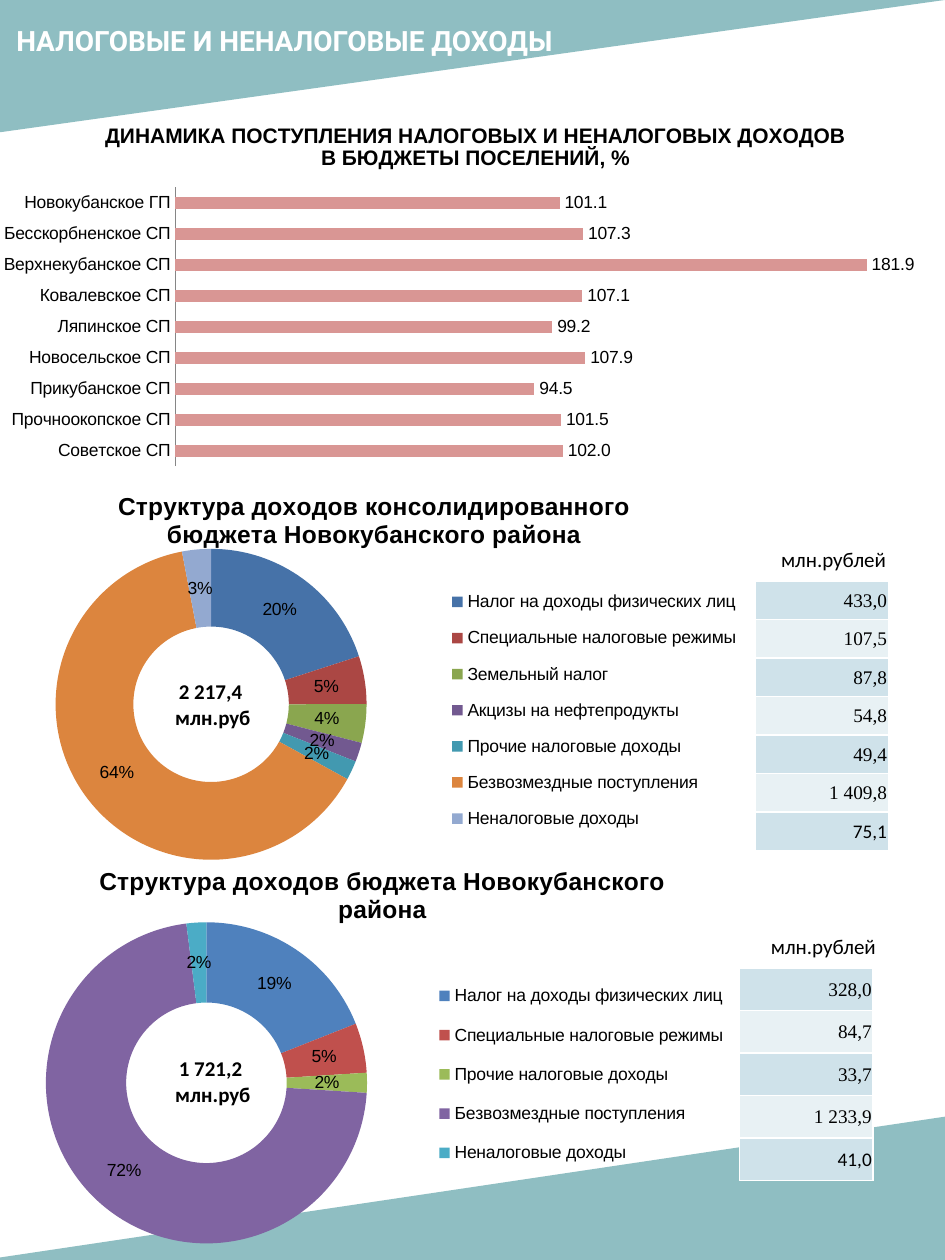
from dataclasses import dataclass

from lxml import etree
from pptx import Presentation
from pptx import util as u
from pptx.chart import data as chart_data
from pptx.dml.color import RGBColor
from pptx.enum import chart as charts, shapes, text
from pptx.oxml import ns, parse_xml

Pt = u.Pt
BLACK, WHITE, TEAL, ROSE, GREY = "000000", "FFFFFF", "519AA0", "D99694", "868686"
BANDS = ("CFE2EA", "E8F1F4")


@dataclass
class Box:
    left: float
    top: float
    width: float
    height: float

    def lengths(self) -> tuple:
        return Pt(self.left), Pt(self.top), Pt(self.width), Pt(self.height)


@dataclass
class Structure:
    """One budget: its ring chart, total and table of amounts."""
    title: str
    chart: Box
    plot: Box
    legend: Box
    total: Box
    total_value: str
    unit: Box
    table: Box
    items: list  # (name, percent, amount, colour)


STRUCTURES = [
    Structure(
        "Структура доходов консолидированного бюджета Новокубанского района",
        Box(-2.9, 269.3, 433.4, 229.7), Box(0.08, 0.17, 0.41, 0.82), Box(0.59, 0.26, 0.4, 0.67),
        Box(88.6, 384.5, 63.4, 36), "2 217,4", Box(439.2, 308.9, 90, 21.6),
        Box(431.3, 331.9, 76.3, 154.1),
        [("Налог на доходы физических лиц", 20, "433,0", "4672A8"),
         ("Специальные налоговые режимы", 5, "107,5", "AB4744"),
         ("Земельный налог", 4, "87,8", "8AA64F"),
         ("Акцизы на нефтепродукты", 2, "54,8", "725990"),
         ("Прочие налоговые доходы", 2, "49,4", "4299B0"),
         ("Безвозмездные поступления", 64, "1 409,8", "DC853E"),
         ("Неналоговые доходы", 3, "75,1", "93A9D0")]),
    Structure(
        "Структура доходов бюджета Новокубанского района",
        Box(0, 483.4, 437, 237.6), Box(0.06, 0.18, 0.42, 0.78), Box(0.56, 0.29, 0.4, 0.52),
        Box(88.6, 599.8, 63.4, 36), "1 721,2", Box(433.4, 529.9, 90, 21.6),
        Box(422.6, 553, 76.3, 121.7),
        [("Налог на доходы физических лиц", 19, "328,0", "4F81BD"),
         ("Специальные налоговые режимы", 5, "84,7", "C0504D"),
         ("Прочие налоговые доходы", 2, "33,7", "9BBB59"),
         ("Безвозмездные поступления", 72, "1 233,9", "8064A2"),
         ("Неналоговые доходы", 2, "41,0", "4BACC6")]),
]

GROWTH = {
    "Новокубанское ГП": 101.1, "Бесскорбненское СП": 107.3, "Верхнекубанское СП": 181.9,
    "Ковалевское СП": 107.1, "Ляпинское СП": 99.2, "Новосельское СП": 107.9,
    "Прикубанское СП": 94.5, "Прочноокопское СП": 101.5, "Советское СП": 102.0,
}


def rgb(colour: str) -> RGBColor:
    return RGBColor.from_string(colour)


def paint(target, colour: str) -> None:
    target.fill.solid()
    target.fill.fore_color.rgb = rgb(colour)


def set_font(font, name: str, size: float, colour: str = BLACK, bold: bool = False) -> None:
    font.name, font.size, font.bold = name, Pt(size), bold
    font.color.rgb = rgb(colour)


def add_corner(slide, box: Box, flip: str) -> None:
    """Translucent right triangle, mirrored by flipH or flipV."""
    shape = slide.shapes.add_shape(shapes.MSO_SHAPE.RIGHT_TRIANGLE, *box.lengths())
    shape.shadow.inherit = False
    shape.line.fill.background()
    paint(shape, TEAL)
    colour = shape._element.spPr.find(".//" + ns.qn("a:srgbClr"))
    etree.SubElement(colour, ns.qn("a:alpha"), val="64000")
    shape._element.spPr.xfrm.set(flip, "1")


def add_text(slide, box: Box, lines: list[str], size: float, font: str = "Calibri",
             colour: str = BLACK, bold: bool = False, align=text.PP_ALIGN.LEFT) -> None:
    frame = slide.shapes.add_textbox(*box.lengths()).text_frame
    frame.word_wrap = True
    frame.text = "\n".join(lines)
    for paragraph in frame.paragraphs:
        paragraph.alignment = align
        set_font(paragraph.font, font, size, colour, bold)


def add_borders(cell) -> None:
    properties = cell._tc.get_or_add_tcPr()
    for index, side in enumerate(("lnL", "lnR", "lnT", "lnB")):
        properties.insert(index, parse_xml(
            f'<a:{side} {ns.nsdecls("a")} w="12192"><a:solidFill>'
            f'<a:srgbClr val="{WHITE}"/></a:solidFill></a:{side}>'))


def add_amounts(slide, box: Box, amounts: list[str]) -> None:
    table = slide.shapes.add_table(len(amounts), 1, *box.lengths()).table
    table.first_row = False
    for index, amount in enumerate(amounts):
        table.rows[index].height = Pt(box.height / len(amounts))
        cell = table.cell(index, 0)
        cell.text = amount
        cell.vertical_anchor = text.MSO_ANCHOR.MIDDLE
        cell.margin_left = cell.margin_right = cell.margin_top = Pt(0.7)
        cell.margin_bottom = 0
        paint(cell, BANDS[index % 2])
        add_borders(cell)
        paragraph = cell.text_frame.paragraphs[0]
        paragraph.alignment = text.PP_ALIGN.RIGHT
        last = index == len(amounts) - 1
        set_font(paragraph.font, "Calibri" if last else "Times New Roman", 11)


def layout_xml(box: Box, inner: bool = False):
    """Manual chart layout, as fractions of the chart's size."""
    target = '<c:layoutTarget val="inner"/>' if inner else ""
    return parse_xml(
        f'<c:layout {ns.nsdecls("c")}><c:manualLayout>{target}'
        f'<c:xMode val="edge"/><c:yMode val="edge"/><c:x val="{box.left}"/><c:y val="{box.top}"/>'
        f'<c:w val="{box.width}"/><c:h val="{box.height}"/></c:manualLayout></c:layout>')


def add_chart(slide, kind, box: Box, plot: Box, title: str, title_size: float, values: dict):
    """Transparent one-series chart with a title and a fixed plot area."""
    data = chart_data.CategoryChartData()
    data.categories = list(values)
    data.add_series("Series 1", list(values.values()))
    chart = slide.shapes.add_chart(kind, *box.lengths(), data).chart
    set_font(chart.font, "Arial", 10)
    chart.has_title = True
    chart.chart_title.text_frame.text = title
    set_font(chart.chart_title.text_frame.paragraphs[0].font, "Arial", title_size, bold=True)
    chart.chart_title.include_in_layout = False
    chart.has_legend = False
    space = chart._chartSpace
    space.chart.addnext(parse_xml(
        f'<c:spPr {ns.nsdecls("c", "a")}><a:noFill/><a:ln><a:noFill/></a:ln></c:spPr>'))
    area = space.chart.plotArea
    for layout in area.findall(ns.qn("c:layout")):
        area.remove(layout)
    area.insert(0, layout_xml(plot, inner=True))
    labels = chart.plots[0]
    labels.has_data_labels = True
    labels.data_labels.number_format_is_linked = False
    set_font(labels.data_labels.font, "Arial", 10)
    return chart


def add_growth_chart(slide) -> None:
    chart = add_chart(
        slide, charts.XL_CHART_TYPE.BAR_CLUSTERED, Box(2.2, 59.8, 537.8, 215.3),
        Box(0.18, 0.22, 0.81, 0.74),
        "ДИНАМИКА ПОСТУПЛЕНИЯ НАЛОГОВЫХ И НЕНАЛОГОВЫХ ДОХОДОВ В БЮДЖЕТЫ ПОСЕЛЕНИЙ, %", 12, GROWTH)
    plot = chart.plots[0]
    plot.vary_by_categories = False
    plot.gap_width, plot.overlap = 150, -25
    plot.data_labels.show_value = True
    plot.data_labels.number_format = "0.0"
    paint(plot.series[0].format, ROSE)
    chart.category_axis.reverse_order = True
    chart.category_axis.major_tick_mark = charts.XL_TICK_MARK.NONE
    chart.category_axis.format.line.color.rgb = rgb(GREY)
    axis = chart.value_axis
    axis.visible = axis.has_major_gridlines = False
    axis.minimum_scale, axis.maximum_scale = 0, 200


def add_structure(slide, structure: Structure) -> None:
    add_text(slide, structure.unit, ["млн.рублей"], 12)
    add_amounts(slide, structure.table, [amount for _, _, amount, _ in structure.items])
    chart = add_chart(slide, charts.XL_CHART_TYPE.DOUGHNUT, structure.chart, structure.plot,
                      structure.title, 14, {name: share for name, share, _, _ in structure.items})
    labels = chart.plots[0].data_labels
    labels.show_percentage, labels.show_value = True, False
    labels.number_format = "0%"
    for index, (_, _, _, colour) in enumerate(structure.items):
        paint(chart.plots[0].series[0].points[index].format, colour)
    chart.has_legend = True
    chart.legend.position = charts.XL_LEGEND_POSITION.RIGHT
    chart.legend.include_in_layout = False
    set_font(chart.legend.font, "Arial", 10)
    legend = chart.legend._element
    for layout in legend.findall(ns.qn("c:layout")):
        legend.remove(layout)
    legend.find(ns.qn("c:legendPos")).addnext(layout_xml(structure.legend))
    add_text(slide, structure.total, [structure.total_value, " млн.руб"], 12, bold=True,
             align=text.PP_ALIGN.CENTER)


def main() -> None:
    presentation = Presentation()
    presentation.slide_width, presentation.slide_height = Pt(540), Pt(720)
    slide = presentation.slides.add_slide(presentation.slide_layouts[6])
    add_corner(slide, Box(0, 0, 540, 75.6), "flipV")
    add_corner(slide, Box(-9.4, 637.9, 550.8, 82.1), "flipH")
    add_text(slide, Box(2.2, 10.1, 324.7, 45.4), ["НАЛОГОВЫЕ И НЕНАЛОГОВЫЕ ДОХОДЫ"], 16,
             "Roboto", WHITE, bold=True)
    add_growth_chart(slide)
    for structure in STRUCTURES:
        add_structure(slide, structure)
    presentation.save("out.pptx")


if __name__ == "__main__":
    main()
